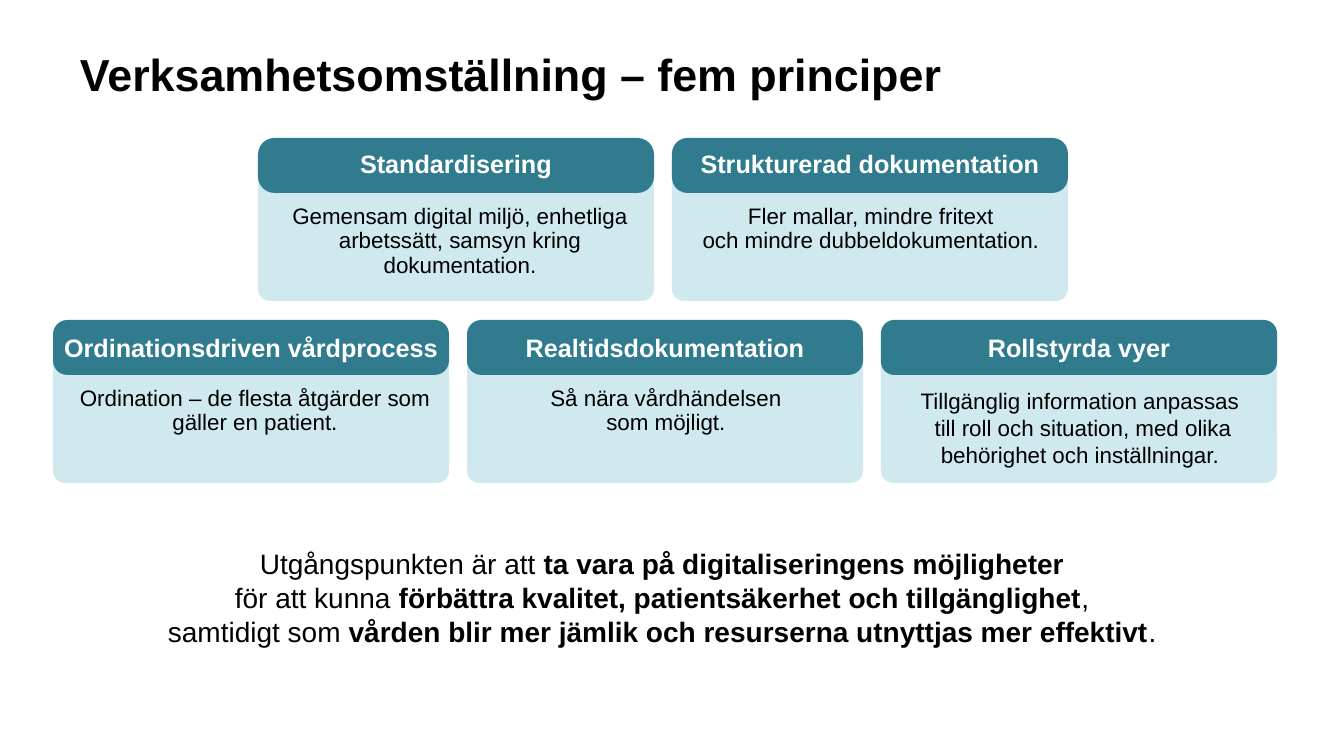
"""Build the slide on five principles for changing the way of working."""
from lxml import etree
from pptx import Presentation
from pptx.dml.color import RGBColor
from pptx.enum.shapes import MSO_SHAPE
from pptx.enum.text import MSO_ANCHOR, PP_ALIGN
from pptx.oxml.ns import qn
from pptx.util import Pt

TITLE = "Verksamhetsomställning – fem principer"
ROWS = [
    {"left": 258, "top": 138, "header_spacing": 0.9, "header_inset": 8, "cards": [
        ("Standardisering", 0.3, 0.9,
         "Gemensam digital miljö, enhetliga arbetssätt, samsyn kring dokumentation."),
        ("Strukturerad dokumentation", 0.28, 0.9,
         "Fler mallar, mindre fritext \noch mindre dubbeldokumentation. "),
    ]},
    {"left": 53, "top": 320, "header_spacing": 1.0, "header_inset": 4, "cards": [
        ("Ordinationsdriven vårdprocess", 0.26, 0.9,
         "Ordination – de flesta åtgärder som gäller en patient."),
        ("Realtidsdokumentation", 0.26, 0.9,
         "Så nära vårdhändelsen \nsom möjligt. "),
        ("Rollstyrda vyer", 0.24, 1.0,
         "Tillgänglig information anpassas \n"
         "till roll och situation, med olika behörighet och inställningar. "),
    ]},
]
CLOSING = [
    [("Utgångspunkten är att ", False),
     ("ta vara på digitaliseringens möjligheter ", True)],
    [("för att kunna ", False),
     ("förbättra kvalitet, patientsäkerhet och tillgänglighet", True),
     (", \n", False),
     ("samtidigt som ", False),
     ("vården blir mer jämlik och resurserna utnyttjas mer effektivt", True),
     (". ", False)],
]

FONT = "Arial"
BLACK = RGBColor(0x00, 0x00, 0x00)
WHITE = RGBColor(0xFF, 0xFF, 0xFF)
TEAL = RGBColor(0x30, 0x7C, 0x8E)
PALE_TEAL = RGBColor(0xCF, 0xE9, 0xEF)
ROUNDED = MSO_SHAPE.ROUNDED_RECTANGLE
CENTER = PP_ALIGN.CENTER
TOP, MIDDLE = MSO_ANCHOR.TOP, MSO_ANCHOR.MIDDLE

PAGE_WIDTH, PAGE_HEIGHT = 1344, 756
CARD_WIDTH, CARD_GAP = 396, 18
HEADER_HEIGHT = 55
BODY_OFFSET, BODY_HEIGHT = 13, 150


def px(length):
    return round(length * 914400 / 100.8)


def style_span(span, size, color, bold):
    span.font.name = FONT
    span.font.size = Pt(size)
    span.font.bold = bold
    span.font.color.rgb = color


def style_breaks(para, size):
    for line_break in para._p.findall(qn("a:br")):
        etree.SubElement(line_break, qn("a:rPr"), sz=str(size * 100))


def set_frame(frame, insets, anchor):
    frame.word_wrap = True
    frame.vertical_anchor = anchor
    (frame.margin_left, frame.margin_top,
     frame.margin_right, frame.margin_bottom) = map(px, insets)


def write(frame, text, size, color, bold, spacing):
    para = frame.paragraphs[0]
    para.text = text
    para.line_spacing = spacing
    for span in para.runs:
        style_span(span, size, color, bold)
    style_breaks(para, size)
    return para


def add_panel(page, left, top, height, radius, fill, insets, anchor):
    panel = page.shapes.add_shape(ROUNDED, px(left), px(top), px(CARD_WIDTH), px(height))
    panel.adjustments[0] = radius
    panel.shadow.inherit = False
    panel.fill.solid()
    panel.fill.fore_color.rgb = fill
    panel.line.fill.background()
    set_frame(panel.text_frame, insets, anchor)
    return panel.text_frame


def add_card(page, row, column, card):
    heading, radius, body_spacing, body = card
    left = row["left"] + column * (CARD_WIDTH + CARD_GAP)
    inset = row["header_inset"]
    frame = add_panel(page, left, row["top"] + BODY_OFFSET, BODY_HEIGHT, 0.08,
                      PALE_TEAL, (12, 51, 4, 8), TOP)
    para = write(frame, body, 16, BLACK, False, body_spacing)
    para.alignment = CENTER
    para.space_after = Pt(6)
    frame = add_panel(page, left, row["top"], HEADER_HEIGHT, radius,
                      TEAL, (4, inset, 4, inset), MIDDLE)
    para = write(frame, heading, 18, WHITE, True, row["header_spacing"])
    para.alignment = CENTER


def add_text_box(page, left, top, width, height):
    box = page.shapes.add_textbox(px(left), px(top), px(width), px(height))
    set_frame(box.text_frame, (10, 5, 10, 5), TOP)
    return box.text_frame


def add_closing(page):
    frame = add_text_box(page, 98, 542, 1136, 112)
    for index, pieces in enumerate(CLOSING):
        para = frame.add_paragraph() if index else frame.paragraphs[0]
        para.alignment = CENTER
        for text, bold in pieces:
            span = para.add_run()
            span.text = text.rstrip("\n")
            style_span(span, 20, BLACK, bold)
            if text.endswith("\n"):
                para.add_line_break()
        style_breaks(para, 20)


def main():
    deck = Presentation()
    deck.slide_width, deck.slide_height = px(PAGE_WIDTH), px(PAGE_HEIGHT)
    page = deck.slides.add_slide(deck.slide_layouts[6])
    write(add_text_box(page, 70, 36, 1210, 126), TITLE, 32, BLACK, True, 1.1)
    for row in ROWS:
        for column, card in enumerate(row["cards"]):
            add_card(page, row, column, card)
    add_closing(page)
    deck.save("out.pptx")


if __name__ == "__main__":
    main()
